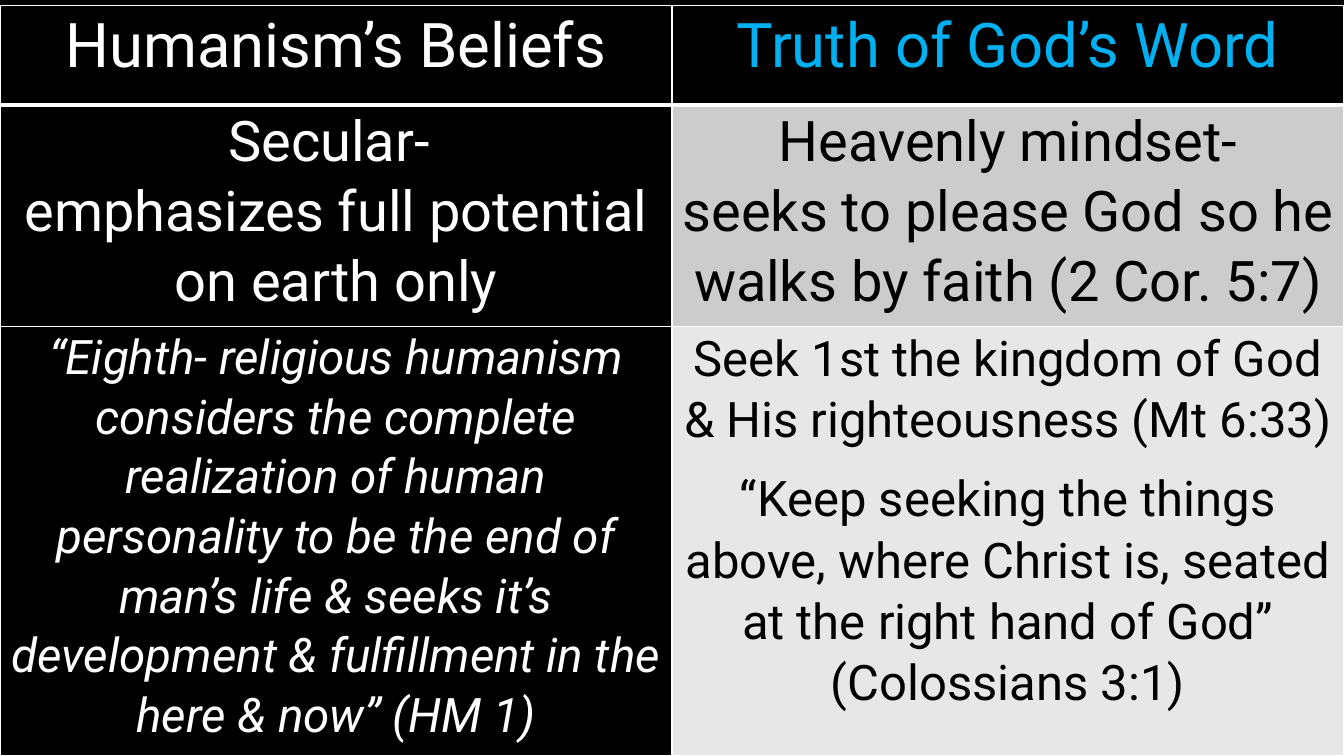
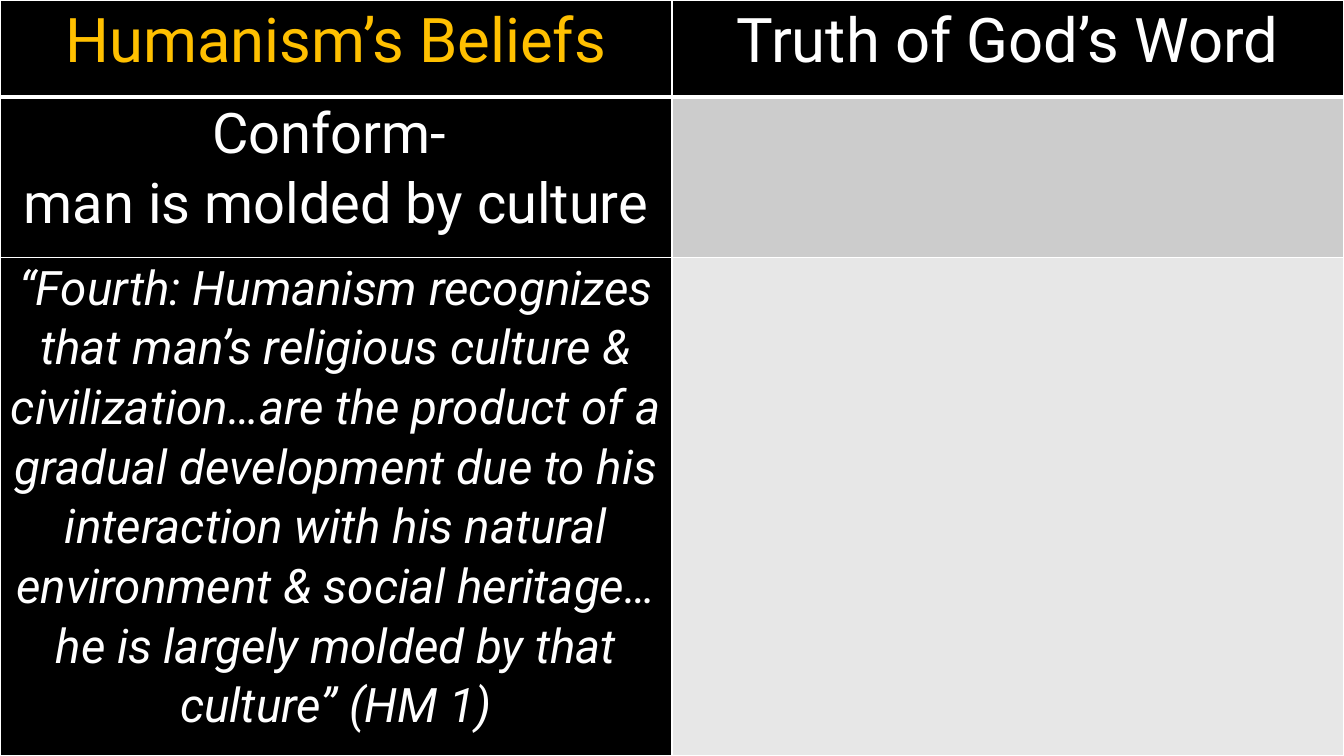
from lxml import etree
from pptx import Presentation
from pptx.dml.color import RGBColor
from pptx.enum import text
from pptx.oxml import ns
from pptx.util import Cm, Pt

BLACK = RGBColor(0x00, 0x00, 0x00)
WHITE = RGBColor(0xFF, 0xFF, 0xFF)
BLUE = RGBColor(0x00, 0xB0, 0xF0)
GOLD = RGBColor(0xFF, 0xC0, 0x00)
GRAY = RGBColor(0xCC, 0xCC, 0xCC)
PALE = RGBColor(0xE7, 0xE7, 0xE7)

WIDE, HIGH = Cm(33.87), Cm(19.05)


class Deck:
    font = "Roboto"
    lead = 1.07
    inset = Cm(0.18)
    thin, thick = Pt(1), Pt(3)
    fills = ((BLACK, BLACK), (BLACK, GRAY), (BLACK, PALE))

    def __init__(self):
        self.prs = Presentation()
        self.prs.slide_width, self.prs.slide_height = WIDE, HIGH
        self.slide = None

    def page(self):
        self.slide = self.prs.slides.add_slide(self.prs.slide_layouts[6])
        fill = self.slide.background.fill
        fill.solid()
        fill.fore_color.rgb = BLACK

    def edge(self, cell, side, width):
        props = cell._tc.get_or_add_tcPr()
        line = etree.SubElement(props, ns.qn(f"a:ln{side}"), w=str(int(width)))
        solid = etree.SubElement(line, ns.qn("a:solidFill"))
        etree.SubElement(solid, ns.qn("a:srgbClr"), val=str(WHITE))

    def cell(self, cell, row, fill):
        """Set borders, then fill, in the order the file format requires."""
        for side in "LRTB":
            heavy = (row, side) in ((0, "B"), (1, "T"))
            self.edge(cell, side, self.thick if heavy else self.thin)
        cell.fill.solid()
        cell.fill.fore_color.rgb = fill
        cell.margin_left = cell.margin_right = self.inset
        cell.margin_top = cell.margin_bottom = 0

    def label(self, cell, lines, size, color, italic=False, gap=0):
        """Fill a cell with paragraphs; gap is the space after the first."""
        frame = cell.text_frame
        frame.text = "\n".join(lines)
        for para in frame.paragraphs:
            para.alignment = text.PP_ALIGN.CENTER
            para.line_spacing = self.lead
            for run in para.runs:
                font = run.font
                font.name, font.size = self.font, Pt(size)
                font.bold, font.italic = False, italic
                font.color.rgb = color
        if gap:
            frame.paragraphs[0].space_after = Pt(gap)

    def grid(self, top, rows, heads, points, quote, verse=()):
        """Compare two beliefs: a heading row, a point row, a quote row."""
        shape = self.slide.shapes.add_table(3, 2, 0, top, WIDE, HIGH - top)
        table = shape.table
        for col in table.columns:
            col.width = WIDE // 2
        for i, high in enumerate(rows):
            table.rows[i].height = Cm(high)
            for j, fill in enumerate(self.fills[i]):
                self.cell(table.cell(i, j), i, fill)
        titles = ("Humanism’s Beliefs", "Truth of God’s Word")
        for j, (title, color) in enumerate(zip(titles, heads)):
            self.label(table.cell(0, j), [title], 44, color)
        for j, (lines, color) in enumerate(zip(points, (WHITE, BLACK))):
            self.label(table.cell(1, j), lines, 40, color)
        self.label(table.cell(2, 0), [quote], 34, WHITE, italic=True)
        if verse:
            self.label(table.cell(2, 1), verse, 35, BLACK, gap=12.5)


def main():
    deck = Deck()

    deck.page()
    deck.grid(
        Cm(0.13), (2.51, 5.59, 10.8), (WHITE, BLUE),
        [("Secular- ", "emphasizes full potential on earth only"),
         ("Heavenly mindset-",
          "seeks to please God so he walks by faith (2 Cor. 5:7)")],
        "“Eighth- religious humanism considers the complete realization of "
        "human personality to be the end of man’s life & seeks it’s "
        "development & fulfillment in the here & now” (HM 1)",
        ("Seek 1st the kingdom of God & His righteousness (Mt 6:33)",
         "“Keep seeking the things above, where Christ is, seated at the "
         "right hand of God”",
         "(Colossians 3:1)"))

    deck.page()
    deck.grid(
        0, (2.44, 4.04, 12.57), (GOLD, WHITE),
        [("Conform- ", "man is molded by culture")],
        "“Fourth: Humanism recognizes that man’s religious culture & "
        "civilization…are the product of a gradual development due to his "
        "interaction with his natural environment & social heritage… he is "
        "largely molded by that culture” (HM 1)")

    deck.prs.save("out.pptx")


if __name__ == "__main__":
    main()
